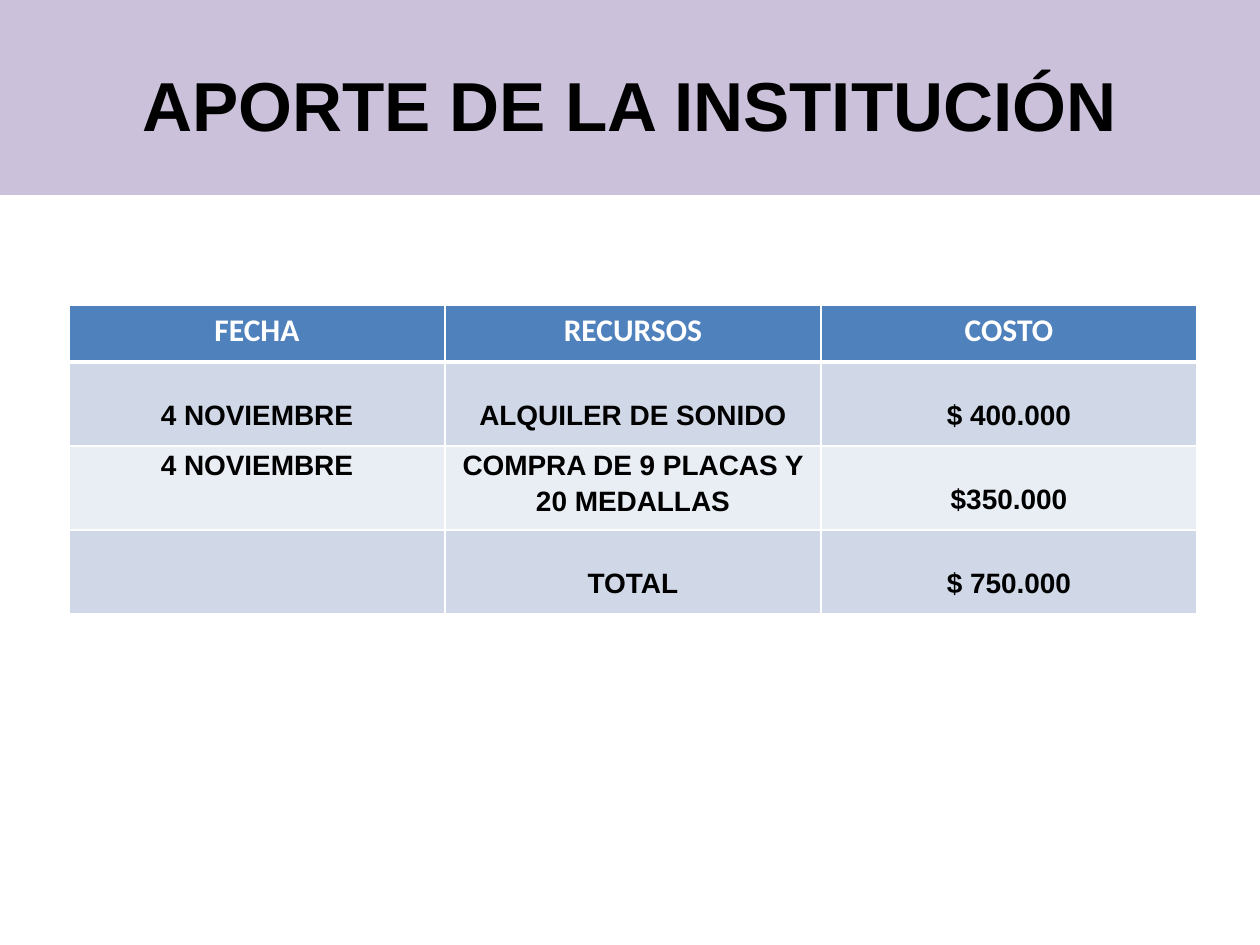
from typing import NamedTuple

from lxml import etree
from pptx import Presentation
from pptx import util as u
from pptx.dml.color import RGBColor
from pptx.enum import shapes, text
from pptx.oxml.ns import qn

PX = u.Inches(1) // 126
BLACK = RGBColor(0x00, 0x00, 0x00)
WHITE = RGBColor(0xFF, 0xFF, 0xFF)
LILAC = RGBColor(0xCC, 0xC1, 0xDA)
BLUE = RGBColor(0x4F, 0x81, 0xBD)
BAND_DARK = RGBColor(0xD0, 0xD8, 0xE8)
BAND_LIGHT = RGBColor(0xE9, 0xED, 0xF4)

COLUMN_WIDTH = 376
HEADER_HEIGHT = 57
ROW_HEIGHT = 84
LINE_HEIGHT = 34


class Entry(NamedTuple):
    wording: str
    lowered: bool = True


HEADINGS = ["FECHA", "RECURSOS", "COSTO"]
EXPENSES = [
    [Entry("4 NOVIEMBRE"), Entry("ALQUILER DE SONIDO"), Entry("$ 400.000")],
    [
        Entry("4 NOVIEMBRE", lowered=False),
        Entry("COMPRA DE 9 PLACAS Y 20 MEDALLAS", lowered=False),
        Entry("$350.000"),
    ],
    [Entry("", lowered=False), Entry("TOTAL"), Entry("$ 750.000")],
]


def px(length: int) -> int:
    return length * PX


def write(frame, wording: str, font: str, size: float, color: RGBColor) -> None:
    frame.text = wording
    line = frame.paragraphs[0]
    line.alignment = text.PP_ALIGN.CENTER
    for run in line.runs:
        run.font.name = font
        run.font.size = u.Pt(size)
        run.font.bold = True
        run.font.color.rgb = color


def set_borders(cell, top: int = 1, bottom: int = 1) -> None:
    properties = cell._tc.get_or_add_tcPr()
    widths = {"a:lnL": 1, "a:lnR": 1, "a:lnT": top, "a:lnB": bottom}
    for position, (side, width) in enumerate(widths.items()):
        border = etree.Element(qn(side), w=str(u.Pt(width)))
        fill = etree.SubElement(border, qn("a:solidFill"))
        etree.SubElement(fill, qn("a:srgbClr"), val=str(WHITE))
        properties.insert(position, border)


def paint(cell, color: RGBColor) -> None:
    cell.fill.solid()
    cell.fill.fore_color.rgb = color


def draw_title(slide, wording: str) -> None:
    banner = slide.shapes.add_shape(
        shapes.MSO_SHAPE.RECTANGLE, 0, 0, px(1260), px(195)
    )
    banner.shadow.inherit = False
    banner.fill.solid()
    banner.fill.fore_color.rgb = LILAC
    banner.line.fill.background()
    frame = banner.text_frame
    frame.word_wrap = True
    frame.vertical_anchor = text.MSO_ANCHOR.MIDDLE
    frame.margin_top, frame.margin_bottom = px(19), px(6)
    write(frame, wording, "Arial", 39.6, BLACK)


def draw_heading(cell, wording: str) -> None:
    paint(cell, BLUE)
    set_borders(cell, bottom=3)
    write(cell.text_frame, wording, "Calibri", 18, WHITE)


def draw_entry(cell, entry: Entry, row: int) -> None:
    paint(cell, BAND_DARK if row % 2 else BAND_LIGHT)
    set_borders(cell, top=3 if row == 1 else 1)
    cell.margin_left = cell.margin_right = px(9)
    cell.margin_top = px(LINE_HEIGHT if entry.lowered else 0)
    cell.margin_bottom = 0
    write(cell.text_frame, entry.wording, "Arial", 16, BLACK)
    cell.text_frame.paragraphs[0].line_spacing = 1.15


def draw_expenses(slide) -> None:
    height = HEADER_HEIGHT + ROW_HEIGHT * len(EXPENSES)
    expenses = slide.shapes.add_table(
        len(EXPENSES) + 1, len(HEADINGS),
        px(69), px(305), px(COLUMN_WIDTH * len(HEADINGS)), px(height),
    ).table
    for column in expenses.columns:
        column.width = px(COLUMN_WIDTH)
    for index, row in enumerate(expenses.rows):
        row.height = px(ROW_HEIGHT if index else HEADER_HEIGHT)
    for column, heading in enumerate(HEADINGS):
        draw_heading(expenses.cell(0, column), heading)
    for row, entries in enumerate(EXPENSES, start=1):
        for column, entry in enumerate(entries):
            draw_entry(expenses.cell(row, column), entry, row)


def main() -> None:
    deck = Presentation()
    deck.slide_width, deck.slide_height = u.Inches(10), u.Inches(7.5)
    slide = deck.slides.add_slide(deck.slide_layouts[6])
    draw_title(slide, "APORTE DE LA INSTITUCIÓN")
    draw_expenses(slide)
    deck.save("out.pptx")


if __name__ == "__main__":
    main()
